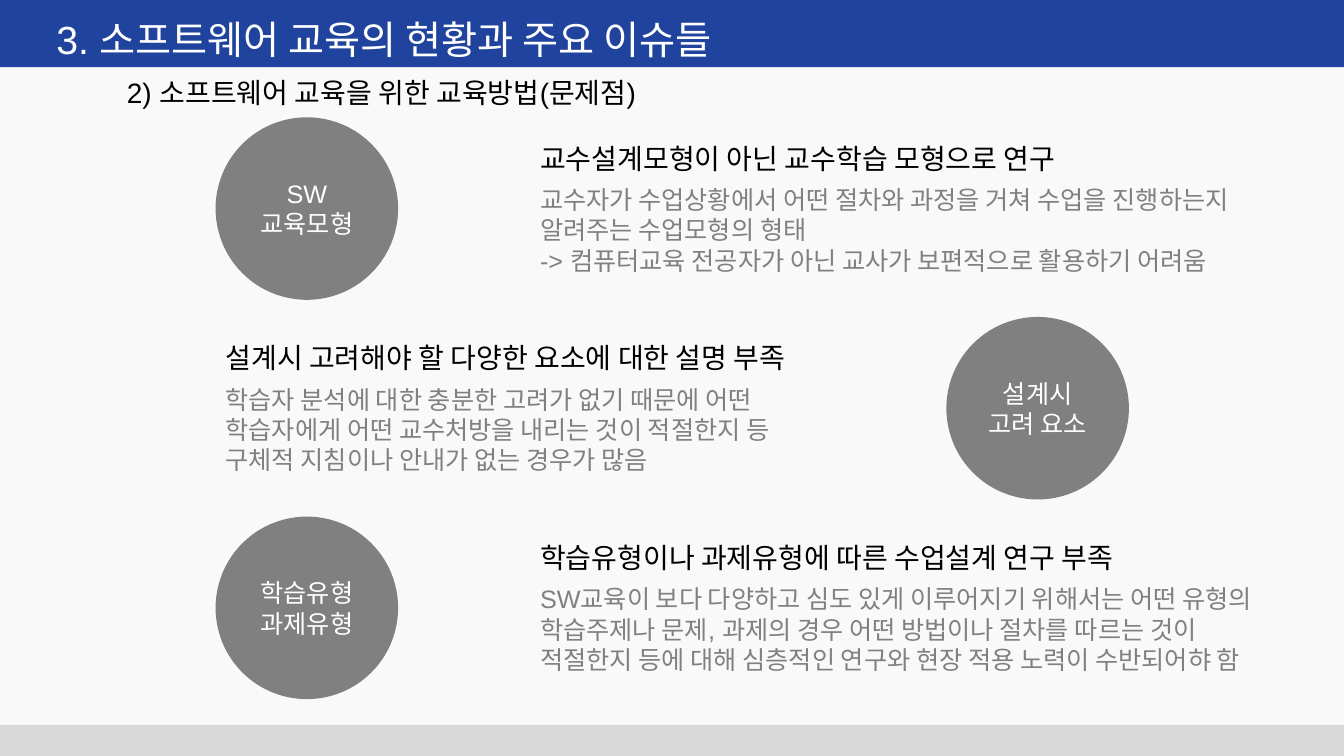
from dataclasses import dataclass

from pptx import Presentation
from pptx.dml.color import RGBColor
from pptx.enum.shapes import MSO_SHAPE
from pptx.enum.text import MSO_ANCHOR, MSO_AUTO_SIZE, PP_ALIGN
from pptx.util import Pt

RECTANGLE = MSO_SHAPE.RECTANGLE
OVAL = MSO_SHAPE.OVAL
LEFT = PP_ALIGN.LEFT
CENTER = PP_ALIGN.CENTER
TOP = MSO_ANCHOR.TOP
MIDDLE = MSO_ANCHOR.MIDDLE
NO_AUTOFIT = MSO_AUTO_SIZE.NONE
TITLE_ONLY = 5


@dataclass(frozen=True)
class Theme:
    """Colours, font and type sizes of the slide."""
    background: RGBColor = RGBColor(0xF9, 0xF9, 0xF9)
    header: RGBColor = RGBColor(0x20, 0x43, 0x9D)
    footer: RGBColor = RGBColor(0xD9, 0xD9, 0xD9)
    gray: RGBColor = RGBColor(0x80, 0x80, 0x80)
    white: RGBColor = RGBColor(0xFF, 0xFF, 0xFF)
    black: RGBColor = RGBColor(0, 0, 0)
    font: str = "Arial"
    title_size: int = 28
    heading_size: int = 20
    body_size: int = 18


THEME = Theme()
WIDTH, HEIGHT = 960, 540
HEADER_HEIGHT = 48
FOOTER_HEIGHT = 22.3
CIRCLE_SIZE = 130.4
FIRST_ROW_TOP, ROW_PITCH = 83.8, 142.6

ISSUES = [
    ("SW\n교육모형", 154, 378.7, 576,
     "교수설계모형이 아닌 교수학습 모형으로 연구",
     "교수자가 수업상황에서 어떤 절차와 과정을 거쳐 수업을 진행하는지\n"
     "알려주는 수업모형의 형태\n"
     "-> 컴퓨터교육 전공자가 아닌 교사가 보편적으로 활용하기 어려움"),
    ("설계시\n고려 요소", 676, 154, 457,
     "설계시 고려해야 할 다양한 요소에 대한 설명 부족",
     "학습자 분석에 대한 충분한 고려가 없기 때문에 어떤\n"
     "학습자에게 어떤 교수처방을 내리는 것이 적절한지 등\n"
     "구체적 지침이나 안내가 없는 경우가 많음"),
    ("학습유형\n과제유형", 154, 378.7, 576,
     "학습유형이나 과제유형에 따른 수업설계 연구 부족",
     "SW교육이 보다 다양하고 심도 있게 이루어지기 위해서는 어떤 유형의\n"
     "학습주제나 문제, 과제의 경우 어떤 방법이나 절차를 따르는 것이\n"
     "적절한지 등에 대해 심층적인 연구와 현장 적용 노력이 수반되어햐 함"),
]


def write_text(shape, text, size, color, alignment=LEFT, anchor=TOP):
    """Put formatted text into a shape."""
    frame = shape.text_frame
    frame.text = text
    frame.word_wrap = True
    frame.auto_size = NO_AUTOFIT
    frame.vertical_anchor = anchor
    frame.margin_left = frame.margin_right = Pt(7.2)
    frame.margin_top = frame.margin_bottom = Pt(3.6)
    for paragraph in frame.paragraphs:
        paragraph.alignment = alignment
        for run in paragraph.runs:
            run.font.name = THEME.font
            run.font.size = Pt(size)
            run.font.color.rgb = color


def add_filled_shape(slide, kind, left, top, width, height, color):
    """Add a flat shape without outline or shadow."""
    shape = slide.shapes.add_shape(kind, Pt(left), Pt(top), Pt(width), Pt(height))
    shape.shadow.inherit = False
    shape.fill.solid()
    shape.fill.fore_color.rgb = color
    shape.line.fill.background()
    return shape


def add_text(slide, left, top, width, height, text, size, color):
    """Add a left-aligned text box."""
    box = slide.shapes.add_textbox(Pt(left), Pt(top), Pt(width), Pt(height))
    write_text(box, text, size, color)


def add_header(slide, left, top, width, height):
    """Place the header band with the title and the subtitle below it."""
    add_filled_shape(slide, RECTANGLE, left, top, width, height, THEME.header)
    title = slide.shapes.title
    title.left, title.top = Pt(left + 33), Pt(top + 7.2)
    title.width, title.height = Pt(530), Pt(height - 7.2)
    write_text(title, "3. 소프트웨어 교육의 현황과 주요 이슈들",
               THEME.title_size, THEME.white)
    title.element.getparent().append(title.element)
    add_text(slide, left + 83.5, top + height + 2.4, 411, 31.5,
             "2) 소프트웨어 교육을 위한 교육방법(문제점)",
             THEME.heading_size, THEME.black)


def add_issue(slide, top, label, circle_left, text_left, text_width, heading, details):
    """Place one issue row: a labelled circle beside a heading and details."""
    circle = add_filled_shape(slide, OVAL, circle_left, top,
                              CIRCLE_SIZE, CIRCLE_SIZE, THEME.gray)
    write_text(circle, label, THEME.body_size, THEME.white, CENTER, MIDDLE)
    add_text(slide, text_left, top + 13.4, text_width, 31.5,
             heading, THEME.heading_size, THEME.black)
    add_text(slide, text_left, top + 44.4, text_width, 72.7,
             details, THEME.body_size, THEME.gray)


def main():
    """Build and save the presentation."""
    presentation = Presentation()
    presentation.slide_width, presentation.slide_height = Pt(WIDTH), Pt(HEIGHT)
    slide = presentation.slides.add_slide(presentation.slide_layouts[TITLE_ONLY])
    slide.background.fill.solid()
    slide.background.fill.fore_color.rgb = THEME.background
    add_header(slide, 0, 0, WIDTH, HEADER_HEIGHT)
    add_filled_shape(slide, RECTANGLE, 0, HEIGHT - FOOTER_HEIGHT,
                     WIDTH, FOOTER_HEIGHT, THEME.footer)
    for row, issue in enumerate(ISSUES):
        add_issue(slide, FIRST_ROW_TOP + row * ROW_PITCH, *issue)
    presentation.save("out.pptx")


if __name__ == "__main__":
    main()
